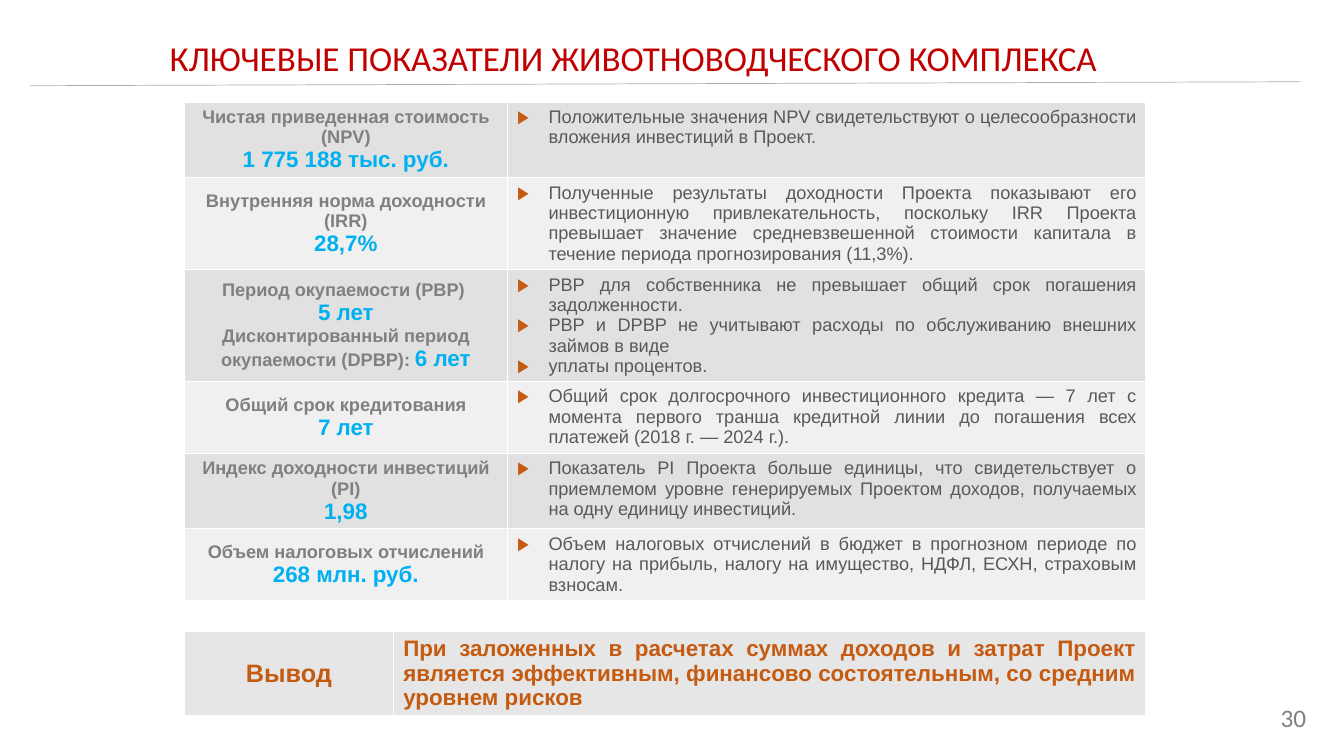
from lxml import etree
from pptx import Presentation
from pptx.dml import color
from pptx.enum import shapes, text
from pptx.oxml import ns
from pptx.util import Cm, Pt

GREY, BLUE, DARK, ORANGE = "808080", "00B0F0", "595959", "C55A11"
LEFT = 4.65
CENTER, JUSTIFY = text.PP_ALIGN.CENTER, text.PP_ALIGN.JUSTIFY
MIDDLE, TOP = text.MSO_ANCHOR.MIDDLE, text.MSO_ANCHOR.TOP

INDICATORS = [
    (1.89, [[("Чистая приведенная стоимость (NPV)", GREY)],
            [("1 775 188 тыс. руб.", BLUE)]],
     ["Положительные значения NPV свидетельствуют о целесообразности вложения "
      "инвестиций в Проект."]),
    (2.32, [[("Внутренняя норма доходности (IRR)", GREY)], [("28,7%", BLUE)]],
     ["Полученные результаты доходности Проекта показывают его инвестиционную "
      "привлекательность, поскольку IRR Проекта превышает значение средневзвешенной "
      "стоимости капитала в течение периода прогнозирования (11,3%)."]),
    (2.8, [[("Период окупаемости (РВР) ", GREY)], [("5 лет", BLUE)],
           [("Дисконтированный период окупаемости (DPBP): ", GREY), ("6 лет", BLUE)]],
     ["PBP для собственника не превышает общий срок погашения задолженности.",
      "PBP и DPBP не учитывают расходы по обслуживанию внешних займов в виде",
      "уплаты процентов."]),
    (1.81, [[("Общий срок кредитования", GREY)], [("7 лет", BLUE)]],
     ["Общий срок долгосрочного инвестиционного кредита — 7 лет с момента первого "
      "транша кредитной линии до погашения всех платежей (2018 г. — 2024 г.)."]),
    (1.89, [[("Индекс доходности инвестиций (PI)", GREY)], [("1,98", BLUE)]],
     ["Показатель PI Проекта больше единицы, что свидетельствует о приемлемом уровне "
      "генерируемых Проектом доходов, получаемых на одну единицу инвестиций."]),
    (1.81, [[("Объем налоговых отчислений", GREY)], [("268 млн. руб.", BLUE)]],
     ["Объем налоговых отчислений в бюджет в прогнозном периоде по налогу на прибыль, "
      "налогу на имущество, НДФЛ, ЕСХН, страховым взносам."]),
]
CONCLUSION = ("При заложенных в расчетах суммах доходов и затрат Проект является "
              "эффективным, финансово состоятельным, со средним уровнем рисков")


def rgb(value):
    return color.RGBColor.from_string(value)


def add_span(para, words, size, ink, bold=False, face="Arial"):
    span = para.add_run()
    span.text = words
    span.font.size, span.font.bold, span.font.name = Pt(size), bold, face
    span.font.color.rgb = rgb(ink)


def add_para(frame, index, align):
    para = frame.add_paragraph() if index else frame.paragraphs[0]
    para.alignment = align
    return para


def add_bullet(para):
    props = para._p.get_or_add_pPr()
    props.set("marL", str(Cm(0.79)))
    props.set("indent", str(Cm(-0.79)))
    tint = etree.SubElement(props, ns.qn("a:buClr"))
    etree.SubElement(tint, ns.qn("a:srgbClr"), val=ORANGE)
    etree.SubElement(props, ns.qn("a:buFont"), typeface="Arial")
    etree.SubElement(props, ns.qn("a:buChar"), char="▶")


def style_cell(cell, fill, anchor):
    props = cell._tc.get_or_add_tcPr()
    for side in ("lnL", "lnR", "lnT", "lnB"):
        border = etree.SubElement(props, ns.qn("a:" + side), w=str(Pt(1)))
        solid = etree.SubElement(border, ns.qn("a:solidFill"))
        etree.SubElement(solid, ns.qn("a:srgbClr"), val="FFFFFF")
    cell.fill.solid()
    cell.fill.fore_color.rgb = rgb(fill)
    cell.vertical_anchor = anchor


def add_grid(page, top, widths, heights):
    holder = page.shapes.add_table(len(heights), len(widths), Cm(LEFT), Cm(top),
                                   Cm(sum(widths)), Cm(sum(heights)))
    grid = holder.table
    grid.first_row = grid.horz_banding = False
    for column, width in zip(grid.columns, widths):
        column.width = Cm(width)
    for row, height in zip(grid.rows, heights):
        row.height = Cm(height)
    return grid


def add_indicators(page):
    grid = add_grid(page, 2.57, (8.13, 16.1), [item[0] for item in INDICATORS])
    for row, (_, label, notes) in enumerate(INDICATORS):
        fill = "F0F0F0" if row % 2 else "E1E1E1"
        name, comment = grid.cell(row, 0), grid.cell(row, 1)
        style_cell(name, fill, MIDDLE)
        style_cell(comment, fill, TOP)
        for index, spans in enumerate(label):
            para = add_para(name.text_frame, index, CENTER)
            for words, ink in spans:
                add_span(para, words, 16 if ink == BLUE else 13, ink, True)
        for index, note in enumerate(notes):
            para = add_para(comment.text_frame, index, JUSTIFY)
            add_bullet(para)
            add_span(para, note, 13, DARK)


def add_conclusion(page):
    grid = add_grid(page, 15.9, (5.26, 18.97), [2.1])
    parts = (("Вывод", 18, CENTER, MIDDLE), (CONCLUSION, 16, JUSTIFY, TOP))
    for column, (words, size, align, anchor) in enumerate(parts):
        cell = grid.cell(0, column)
        style_cell(cell, "E7E6E6", anchor)
        add_span(add_para(cell.text_frame, 0, align), words, size, ORANGE, True)


def add_title(page, words):
    box = page.shapes.title
    box.left, box.top, box.width, box.height = Cm(3.89), Cm(0.79), Cm(24.13), Cm(1.32)
    box.text_frame.word_wrap = False
    add_span(add_para(box.text_frame, 0, CENTER), words, 25, "C00000", face="Calibri")


def add_rule(page):
    rule = page.shapes.add_connector(shapes.MSO_CONNECTOR.STRAIGHT,
                                     Cm(0.76), Cm(2.16), Cm(32.77), Cm(2.06))
    rule.line.color.rgb = rgb("AFABAB")
    rule.line.width = Pt(0.5)
    etree.SubElement(rule._element.spPr, ns.qn("a:effectLst"))


def add_page_number(page, number):
    box = page.shapes.add_textbox(Cm(25.55), Cm(17.58), Cm(7.62), Cm(1.02))
    box.text_frame.word_wrap = True
    box.text_frame.vertical_anchor = MIDDLE
    para = add_para(box.text_frame, 0, text.PP_ALIGN.RIGHT)
    add_span(para, number, 18, GREY, face="Calibri")


def main():
    deck = Presentation()
    deck.slide_width, deck.slide_height = Cm(33.87), Cm(19.05)
    page = deck.slides.add_slide(deck.slide_layouts[5])
    add_indicators(page)
    add_conclusion(page)
    add_title(page, "КЛЮЧЕВЫЕ ПОКАЗАТЕЛИ ЖИВОТНОВОДЧЕСКОГО КОМПЛЕКСА")
    add_rule(page)
    add_page_number(page, "30")
    deck.save("out.pptx")


if __name__ == "__main__":
    main()
